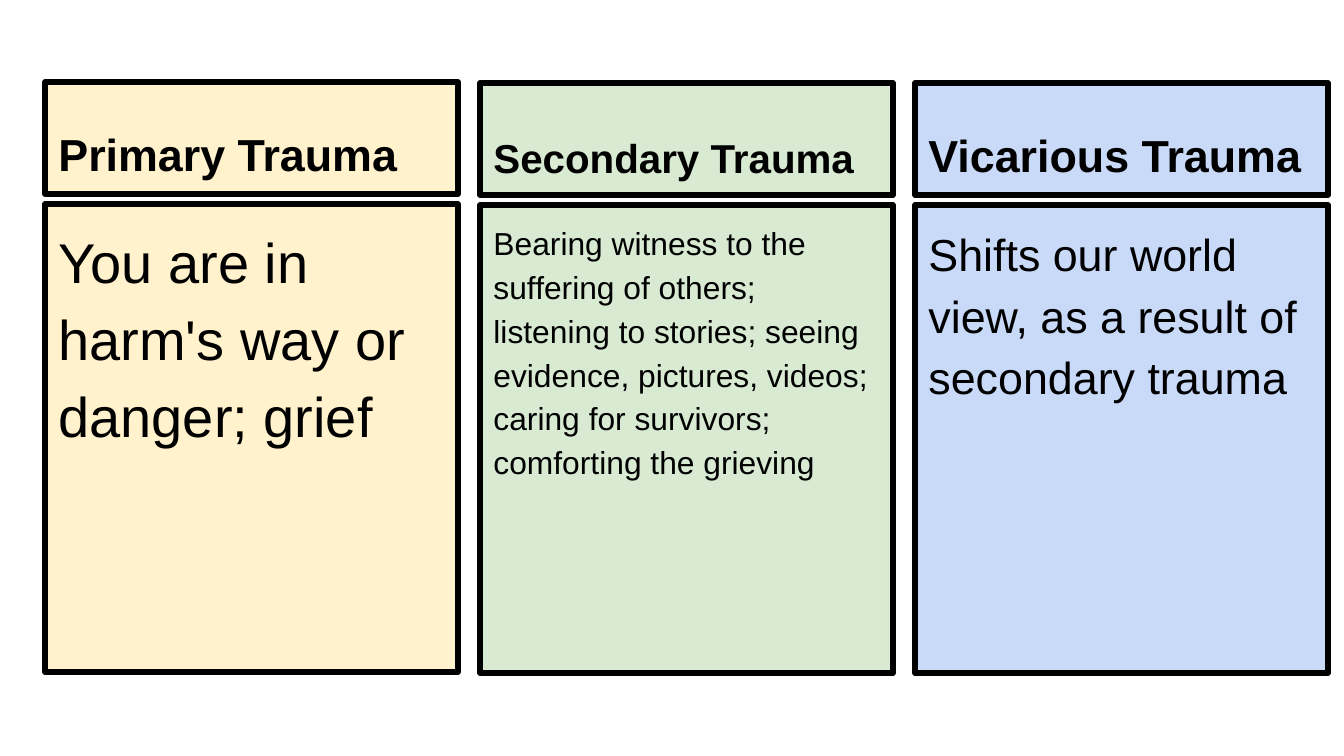
from copy import deepcopy
from dataclasses import dataclass

from pptx import Presentation
from pptx import util as u
from pptx.dml.color import RGBColor
from pptx.enum import text
from pptx.oxml.xmlchemy import OxmlElement

SCALE = u.Inches(1) / 134.4


@dataclass(frozen=True)
class Theme:
    font: str = "Arial"
    ink: str = "000000"
    cream: str = "FFF2CC"
    green: str = "D9EAD3"
    blue: str = "C9DAF8"
    border: int = 3
    large: float = 30
    head: float = 24
    snug: float = 21.6
    small: float = 17


THEME = Theme()

# heading, heading size, body, body size, fill, top
COLUMNS = [
    ("Primary Trauma", THEME.head,
     "You are in harm's way or danger; grief", THEME.large, THEME.cream, 82),
    ("Secondary Trauma", THEME.snug,
     "Bearing witness to the suffering of others; listening to stories; "
     "seeing evidence, pictures, videos; caring for survivors; "
     "comforting the grieving", THEME.small, THEME.green, 83),
    ("Vicarious Trauma", THEME.head,
     "Shifts our world view, as a result of secondary trauma",
     THEME.head, THEME.blue, 83),
]
LEFT, PITCH, WIDTH = 45, 435, 413
HEAD_H, BODY_H, STEP = 112, 468, 122


def px(n):
    return u.Emu(round(n * SCALE))


def color(code):
    return RGBColor.from_string(code)


def repeat(slide, holder, count):
    """Return the placeholder followed by further ones of the same type."""
    holders = [holder]
    for _ in range(count - 1):
        node = deepcopy(holder.element)
        node.nvSpPr.cNvPr.id = max(s.shape_id for s in slide.shapes) + 1
        slide.shapes._spTree.append(node)
        holders.append(slide.shapes[-1])
    return holders


def panel(shape, left, top, height, fill):
    shape.left, shape.top = px(left), px(top)
    shape.width, shape.height = px(WIDTH), px(height)
    shape.fill.solid()
    shape.fill.fore_color.rgb = color(fill)
    shape.line.color.rgb = color(THEME.ink)
    shape.line.width = u.Pt(THEME.border)


def write(shape, words, size, anchor, bold=False):
    frame = shape.text_frame
    frame.text = words
    frame.word_wrap = True
    frame.auto_size = text.MSO_AUTO_SIZE.NONE
    frame.vertical_anchor = anchor
    frame.margin_left = frame.margin_right = u.Inches(0.1)
    frame.margin_top = frame.margin_bottom = u.Inches(0.1)
    para = frame.paragraphs[0]
    para.alignment = text.PP_ALIGN.LEFT
    para.space_before = u.Pt(0)
    font = para.runs[0].font
    font.name, font.size, font.bold = THEME.font, u.Pt(size), bold
    font.color.rgb = color(THEME.ink)
    return para


def prose(para):
    """Turn a list item into plain, loosely spaced text."""
    para.line_spacing = 1.15
    para.space_after = u.Pt(12)
    props = para._p.get_or_add_pPr()
    props.set("marL", "0")
    props.set("indent", "0")
    props.append(OxmlElement("a:buNone"))


def main():
    deck = Presentation()
    deck.slide_width, deck.slide_height = px(1344), px(756)
    slide = deck.slides.add_slide(deck.slide_layouts[1])
    heads = repeat(slide, slide.shapes.title, len(COLUMNS))
    bodies = repeat(slide, slide.placeholders[1], len(COLUMNS))

    for i, (name, size, words, body_size, fill, top) in enumerate(COLUMNS):
        left = LEFT + i * PITCH
        panel(heads[i], left, top, HEAD_H, fill)
        write(heads[i], name, size, text.MSO_ANCHOR.BOTTOM, bold=True)
        panel(bodies[i], left, top + STEP, BODY_H, fill)
        prose(write(bodies[i], words, body_size, text.MSO_ANCHOR.TOP))

    deck.save("out.pptx")


if __name__ == "__main__":
    main()
